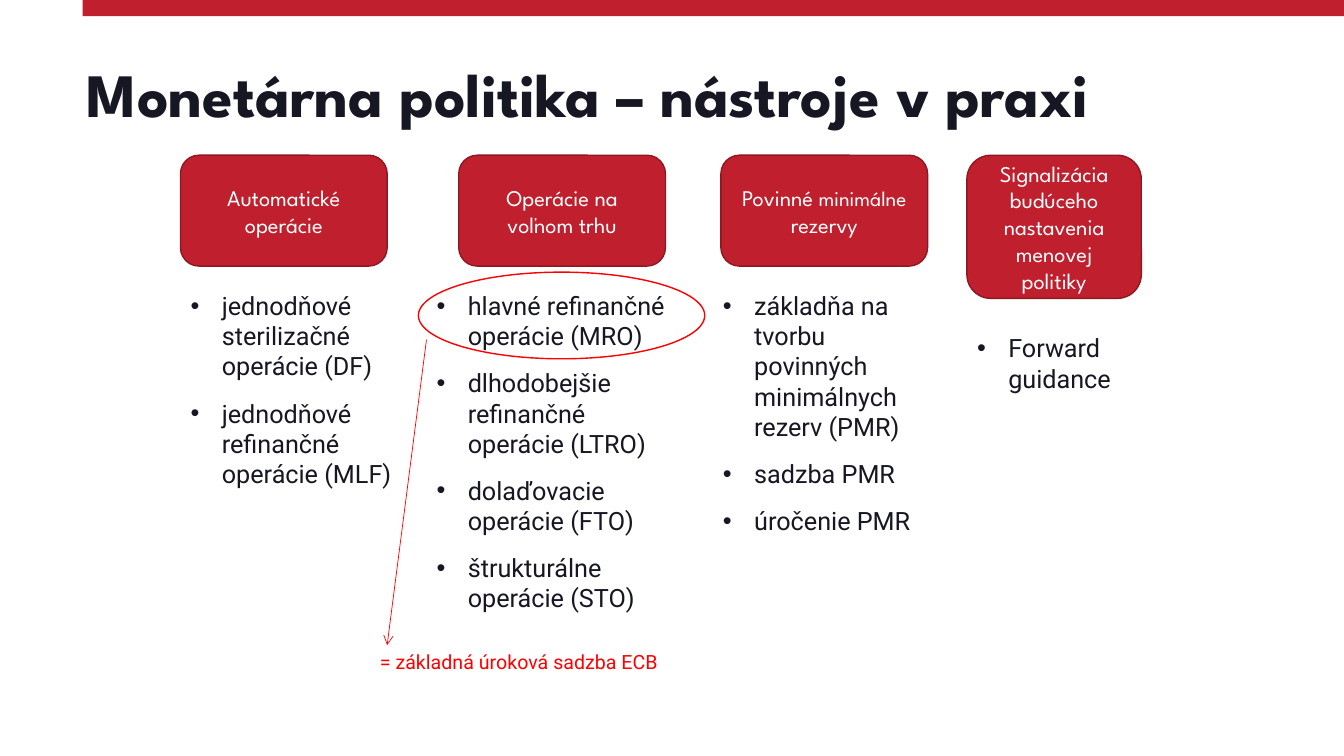
"""Build a slide on the tools of monetary policy in practice."""
from pptx import Presentation
from pptx.dml.color import RGBColor
from pptx.enum.shapes import MSO_CONNECTOR as Connector, MSO_SHAPE as Shape
from pptx.enum.text import MSO_ANCHOR as Anchor, MSO_AUTO_SIZE as AutoSize, PP_ALIGN as Align
from pptx.oxml.ns import qn
from pptx.util import Emu, Pt
from lxml.etree import SubElement

PX = 9144
RED, DARK_RED, BRIGHT_RED = "C0202E", "8E1822", "FF0000"
INK, WHITE = "171723", "FFFFFF"
HEADING, BODY = "League Spartan", "Roboto"
CARD_TOP = 154
INDENT = 31

COLUMNS = [
    ((179, CARD_TOP, 205, 110), [("Automatické operácie", 16)],
     (179, 283, 228, 209),
     ["jednodňové sterilizačné operácie (DF)", "jednodňové refinančné operácie (MLF)"]),
    ((455, CARD_TOP, 205, 110), [("Operácie na voľnom trhu", 16)],
     (423, 283, 268, 333),
     ["hlavné refinančné operácie (MRO)", "dlhodobejšie refinančné operácie (LTRO)",
      "dolaďovacie operácie (FTO)", "štrukturálne operácie (STO)"]),
    ((715, CARD_TOP, 205, 110), [("Povinné ", 16), ("minimálne", 15), (" rezervy", 16)],
     (707, 283, 236, 256),
     ["základňa na tvorbu povinných minimálnych rezerv (PMR)", "sadzba PMR", "úročenie PMR"]),
    ((959, CARD_TOP, 173, 142), [("Signalizácia budúceho nastavenia menovej politiky", 16)],
     (959, 325, 173, 71),
     ["Forward guidance"]),
]


def px(*lengths):
    """Turn pixel lengths into EMU."""
    return [Emu(length * PX) for length in lengths]


def color(hex_code):
    """Turn a hex string into a colour."""
    return RGBColor.from_string(hex_code)


def move(shape, box):
    """Place a shape in a pixel box."""
    shape.left, shape.top, shape.width, shape.height = px(*box)


def add_run(para, text, size, face, hex_code, bold=False):
    """Add one formatted run to a paragraph."""
    span = para.add_run()
    span.text = text
    span.font.size = Pt(size)
    span.font.name = face
    span.font.bold = bold
    span.font.color.rgb = color(hex_code)


def add_figure(page, kind, box, fill=None, line=None):
    """Add a flat preset shape with an optional fill and outline."""
    figure = page.shapes.add_shape(kind, *px(*box))
    figure.shadow.inherit = False
    if fill:
        figure.fill.solid()
        figure.fill.fore_color.rgb = color(fill)
    else:
        figure.fill.background()
    if line:
        figure.line.color.rgb = color(line)
        figure.line.width = Pt(1)
    else:
        figure.line.fill.background()
    return figure


def fill_title(title, box, text):
    """Place and format the slide title."""
    move(title, box)
    frame = title.text_frame
    frame.auto_size = AutoSize.NONE
    frame.vertical_anchor = Anchor.MIDDLE
    para = frame.paragraphs[0]
    para.alignment = Align.LEFT
    para.line_spacing = 0.9
    add_run(para, text, 44, HEADING, INK, bold=True)


def add_card(page, box, parts):
    """Add a red rounded heading card."""
    card = add_figure(page, Shape.ROUNDED_RECTANGLE, box, RED, DARK_RED)
    frame = card.text_frame
    frame.word_wrap = True
    frame.vertical_anchor = Anchor.MIDDLE
    para = frame.paragraphs[0]
    para.alignment = Align.CENTER
    for text, size in parts:
        add_run(para, text, size, HEADING, WHITE)


def fill_list(body, box, items):
    """Place a body placeholder and fill it with bullets."""
    move(body, box)
    frame = body.text_frame
    frame.word_wrap = True
    frame.auto_size = AutoSize.SHAPE_TO_FIT_TEXT
    frame.vertical_anchor = Anchor.TOP
    for number, item in enumerate(items):
        para = frame.add_paragraph() if number else frame.paragraphs[0]
        settings = para._p.get_or_add_pPr()
        settings.set("marL", str(INDENT * PX))
        settings.set("indent", str(-INDENT * PX))
        SubElement(settings, qn("a:buFont")).set("typeface", "Arial")
        SubElement(settings, qn("a:buChar")).set("char", "•")
        para.space_before = Pt(12 if number else 0)
        add_run(para, item, 18, BODY, INK)


def add_callout(page, box):
    """Circle the key operation and point an arrow to its note."""
    left, top, width, height = box
    add_figure(page, Shape.OVAL, box, line=BRIGHT_RED)
    note_top = top + 370
    arrow = page.shapes.add_connector(
        Connector.STRAIGHT, *px(left + 8, top + 67, left - 31, note_top))
    arrow.line.color.rgb = color(BRIGHT_RED)
    arrow.line.width = Pt(0.5)
    SubElement(arrow.line._get_or_add_ln(), qn("a:tailEnd")).set("type", "arrow")
    SubElement(arrow._element.spPr, qn("a:effectLst"))
    note = page.shapes.add_textbox(*px(left - 48, note_top, 298, 34))
    note.text_frame.word_wrap = False
    note.text_frame.auto_size = AutoSize.SHAPE_TO_FIT_TEXT
    add_run(note.text_frame.paragraphs[0], "= základná úroková sadzba ECB", 14, BODY, BRIGHT_RED)


def main():
    """Build and save the deck."""
    deck = Presentation()
    deck.slide_width, deck.slide_height = px(1333, 750)
    page = deck.slides.add_slide(deck.slide_layouts.get_by_name("Comparison"))
    title, *bodies = list(page.placeholders)[:1 + len(COLUMNS)]
    add_figure(page, Shape.RECTANGLE, (82, 0, 1251, 16), RED)
    fill_title(title, (76, 24, 1150, 145), "Monetárna politika – nástroje v praxi")
    for body, (card_box, parts, list_box, items) in zip(bodies, COLUMNS):
        add_card(page, card_box, parts)
        fill_list(body, list_box, items)
    add_callout(page, (415, 270, 284, 86))
    deck.save("out.pptx")


if __name__ == "__main__":
    main()
